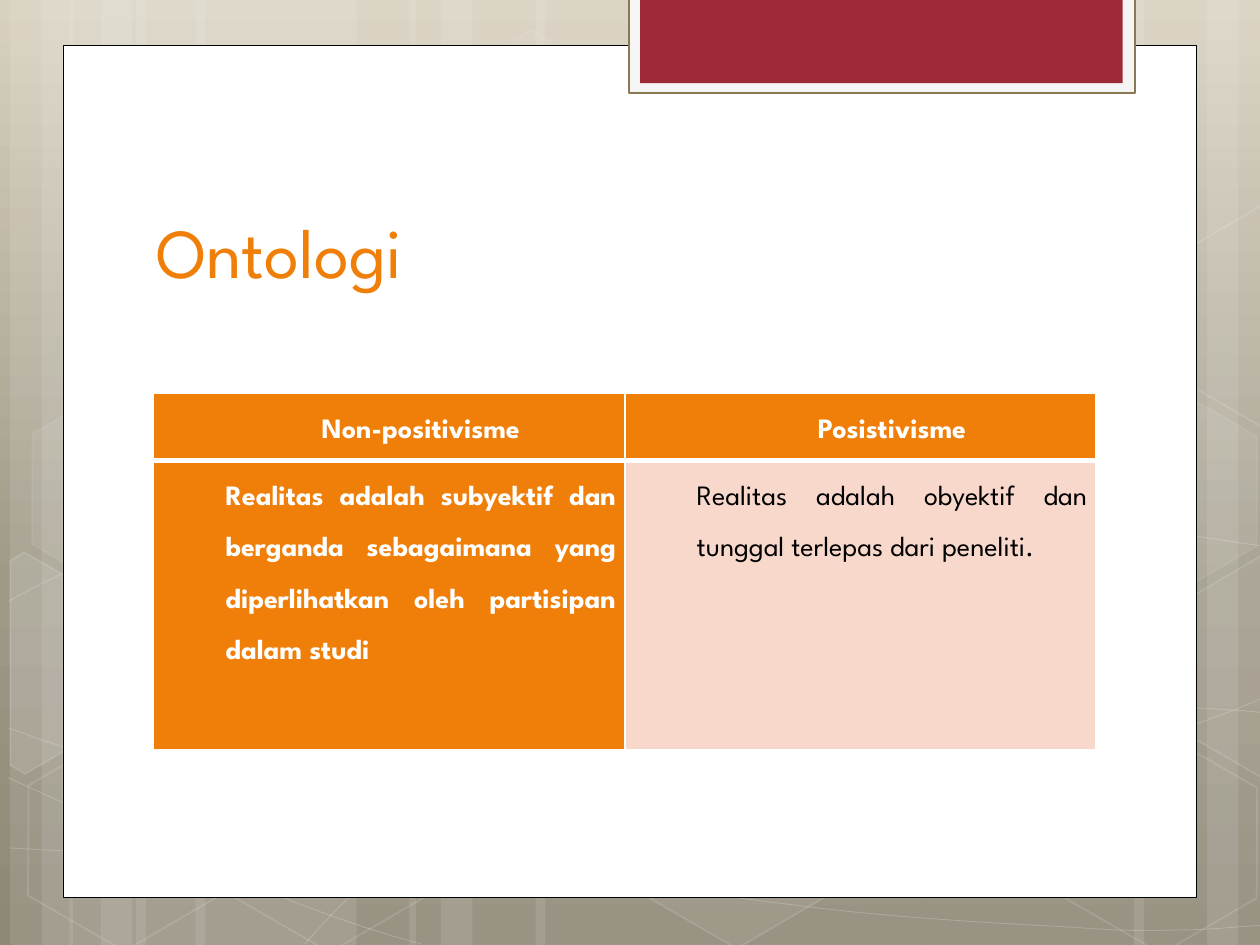
from copy import deepcopy
from math import cos, radians, sin

from lxml import etree
from pptx import Presentation
from pptx import util as u
from pptx.dml.color import RGBColor
from pptx.enum import shapes, text
from pptx.oxml.ns import qn

COLORS = {
    "white": "FFFFFF", "black": "000000", "orange": "F07F09", "pink": "F9D8CC",
    "red": "9F2936", "frame": "F5F5F5", "khaki": "887952",
    "sky": "D8D1C0", "middle": "9F9988", "ground": "8E8776",
}
FONT = "League Spartan"
RECT = shapes.MSO_SHAPE.RECTANGLE
Inches = u.Inches


def paint(shape, fill=None, fill_alpha=100, line=None, width=1, line_alpha=100):
    shape.shadow.inherit = False
    for target, name, alpha in ((shape.fill, fill, fill_alpha), (shape.line.fill, line, line_alpha)):
        if name is None:
            target.background()
            continue
        target.solid()
        target.fore_color.rgb = RGBColor.from_string(COLORS[name])
        if alpha < 100:
            owner = shape._element.spPr if target is shape.fill else shape.line._ln
            color = owner.find(qn("a:solidFill")).find(qn("a:srgbClr"))
            etree.SubElement(color, qn("a:alpha")).set("val", str(alpha * 1000))
    if line:
        shape.line.width = u.Pt(width)


def write(para, words, size, color, bold=False):
    span = para.add_run()
    span.text = words
    span.font.name = FONT
    span.font.size = u.Pt(size)
    span.font.bold = bold
    span.font.color.rgb = RGBColor.from_string(COLORS[color])


deck = Presentation()
deck.slide_width, deck.slide_height = Inches(10), Inches(7.5)
page = deck.slides.add_slide(deck.slide_layouts[6])

backdrop = page.background.fill
backdrop.gradient()
backdrop.gradient_angle = 270
stop_list = page._element.find(".//" + qn("a:gsLst"))
stop_list.append(deepcopy(stop_list[-1]))
for stop, (place, name) in zip(backdrop.gradient_stops, ((0, "sky"), (0.62, "middle"), (1, "ground"))):
    stop.position = place
    stop.color.rgb = RGBColor.from_string(COLORS[name])

stripes = [
    (1.08, 1.75), (0.08, 0.5), (0.33, 0.83), (1.55, 1.75), (0.55, 0.5), (0.8, 0.83),
    (7.33, 1.75), (9.58, 0.5), (9, 0.83), (4.25, 3.08), (3.25, 0.5), (3.5, 0.83),
]
for left, width in stripes:
    stripe = page.shapes.add_shape(RECT, Inches(left), 0, Inches(width), deck.slide_height)
    paint(stripe, "white", 10)

curves = [
    [(0.07, 6.73), (0.61, 6.76), (1.15, 6.79), (1.9, 6.78), (2.65, 6.77), (3.58, 6.75), (4.58, 6.65),
     (5.58, 6.55), (7, 6.36), (7.92, 6.17), (8.83, 5.98), (9.77, 5.68), (10.07, 5.51)],
    [(0.07, 4.77), (0.36, 4.61), (0.65, 4.46), (1.21, 4.31), (1.78, 4.16), (2.59, 3.94), (3.47, 3.87),
     (4.36, 3.8), (5.44, 3.79), (6.54, 3.87), (7.64, 3.95), (9.47, 4.26), (10.07, 4.34)],
    [(0.06, 6.17), (1.27, 6.72), (2.47, 7.27), (3.34, 7.49)],
    [(0.07, 5.78), (0.38, 5.89), (0.7, 6), (1.28, 6.16), (1.86, 6.31), (2.73, 6.56), (3.57, 6.73),
     (4.4, 6.9), (5.45, 7.08), (6.28, 7.18), (7.11, 7.29), (8, 7.33), (8.53, 7.36),
     (9.05, 7.4), (9.19, 7.38), (9.45, 7.38), (9.71, 7.37), (9.89, 7.35), (10.07, 7.34)],
    [(2.42, 7.49), (2.6, 7.29), (2.78, 7.09), (3.02, 6.91), (3.26, 6.73), (3.6, 6.53), (3.88, 6.39),
     (4.16, 6.25), (4.33, 6.19), (4.7, 6.09), (5.06, 5.99), (5.73, 5.85), (6.08, 5.78),
     (6.44, 5.71), (6.49, 5.71), (6.8, 5.69), (7.11, 5.66), (7.6, 5.63), (7.94, 5.62),
     (8.29, 5.61), (8.86, 5.62), (8.86, 5.62), (9.08, 5.62), (9.31, 5.62), (9.53, 5.62),
     (9.71, 5.63), (9.88, 5.64), (9.97, 5.65), (10.06, 5.66), (10.03, 5.65), (10.06, 5.66)],
]
for knots in curves:
    points = [(Inches(x), Inches(y)) for x, y in knots]
    builder = page.shapes.build_freeform(*points[0])
    builder.add_line_segments(points[1:], close=False)
    curve = builder.convert_to_shape()
    outline = curve._element.find(".//" + qn("a:path"))
    segments = outline.findall(qn("a:lnTo"))
    for first in range(0, len(segments), 3):
        bezier = etree.SubElement(outline, qn("a:cubicBezTo"))
        for segment in segments[first:first + 3]:
            bezier.append(segment[0])
            outline.remove(segment)
    paint(curve, line="white", width=0.5, line_alpha=20)

hexagons = [
    (3.34, 0.36, 4, 8), (4.97, 5.89, 6, 12), (0.11, 5.91, 0, 12), (0.14, 3.12, 7, 8), (1.74, 5.92, 0, 12),
    (7.53, 4.53, 10, 12), (8.34, 5.93, 0, 12), (8.34, 3.14, 7, 8),
]
for left, top, alpha, line_alpha in hexagons:
    hexagon = page.shapes.add_shape(
        shapes.MSO_SHAPE.HEXAGON, Inches(left), Inches(top), Inches(1.75), Inches(1.52))
    hexagon.adjustments[0] = 0.285
    hexagon.rotation = 30
    paint(hexagon, "white" if alpha else None, alpha, "white", 1, line_alpha)

TILT = radians(30)
cut_hexagons = [
    (10, (0.36, 5.35), [(0.08, 4.45), (0.19, 4.38), (0.96, 4.82), (0.95, 5.7), (0.2, 6.14), (0.08, 6.07)]),
    (4, (9.85, 5.2), [(9.26, 4.85), (10.01, 4.41), (10.09, 4.46), (10.09, 6.13), (10.02, 6.17), (9.26, 5.73)]),
    (0, (9.85, 2.41), [(9.26, 2.07), (10.01, 1.63), (10.1, 1.68), (10.09, 3.35), (10.02, 3.39), (9.26, 2.95)]),
]
for alpha, (middle_x, middle_y), corners in cut_hexagons:
    points = []
    for x, y in corners:
        across, down = x - middle_x, y - middle_y
        points.append((Inches(middle_x + across * cos(TILT) + down * sin(TILT)),
                       Inches(middle_y - across * sin(TILT) + down * cos(TILT))))
    builder = page.shapes.build_freeform(*points[0])
    builder.add_line_segments(points[1:], close=True)
    cut_hexagon = builder.convert_to_shape()
    cut_hexagon.rotation = 30
    paint(cut_hexagon, "white" if alpha else None, alpha, "white", 1, 12)

panels = [
    (0.5, 0.36, 9, 6.76, "white", "black", 0.5),
    (4.99, -0.02, 4.02, 0.76, "frame", "khaki", 1.25),
    (5.08, -0.02, 3.83, 0.68, "red", None, 0),
]
for left, top, width, height, fill, line, weight in panels:
    panel = page.shapes.add_shape(RECT, Inches(left), Inches(top), Inches(width), Inches(height))
    paint(panel, fill, line=line, width=weight)

title_box = page.shapes.add_textbox(Inches(1.14), Inches(1.12), Inches(7.68), Inches(1.25))
title_box.text_frame.word_wrap = True
title_box.text_frame.vertical_anchor = text.MSO_ANCHOR.BOTTOM
write(title_box.text_frame.paragraphs[0], "Ontologi", 40, "orange")

center, justify = text.PP_ALIGN.CENTER, text.PP_ALIGN.JUSTIFY
rows = [
    (0.49, center, [("Non-positivisme", "orange", "white", True), ("Posistivisme", "orange", "white", True)]),
    (2.3, justify, [
        ("Realitas adalah subyektif dan berganda sebagaimana yang diperlihatkan oleh partisipan dalam studi",
         "orange", "white", True),
        ("Realitas adalah obyektif dan tunggal terlepas dari peneliti.", "pink", "black", False),
    ]),
]
table = page.shapes.add_table(2, 2, Inches(1.22), Inches(3.12), Inches(7.48), Inches(2.79)).table
table.first_row = table.horz_banding = False
for row_index, (height, align, entries) in enumerate(rows):
    table.rows[row_index].height = Inches(height)
    for column_index, (words, fill, color, bold) in enumerate(entries):
        cell = table.cell(row_index, column_index)
        cell.margin_left = cell.margin_right = Inches(0.07)
        cell.margin_top = cell.margin_bottom = 0
        para = cell.text_frame.paragraphs[0]
        para.alignment = align
        para.line_spacing = 2.0
        para._p.get_or_add_pPr().set("marL", str(Inches(0.5)))
        write(para, words, 16, color, bold)
        divider = "lnB" if row_index == 0 else "lnT"
        for side in ("lnL", "lnR", "lnT", "lnB"):
            weight = 3 if side == divider else 1
            border = etree.SubElement(cell._tc.get_or_add_tcPr(), qn("a:" + side), w=str(u.Pt(weight)))
            solid = etree.SubElement(border, qn("a:solidFill"))
            etree.SubElement(solid, qn("a:srgbClr"), val=COLORS["white"])
        cell.fill.solid()
        cell.fill.fore_color.rgb = RGBColor.from_string(COLORS[fill])

deck.save("out.pptx")
